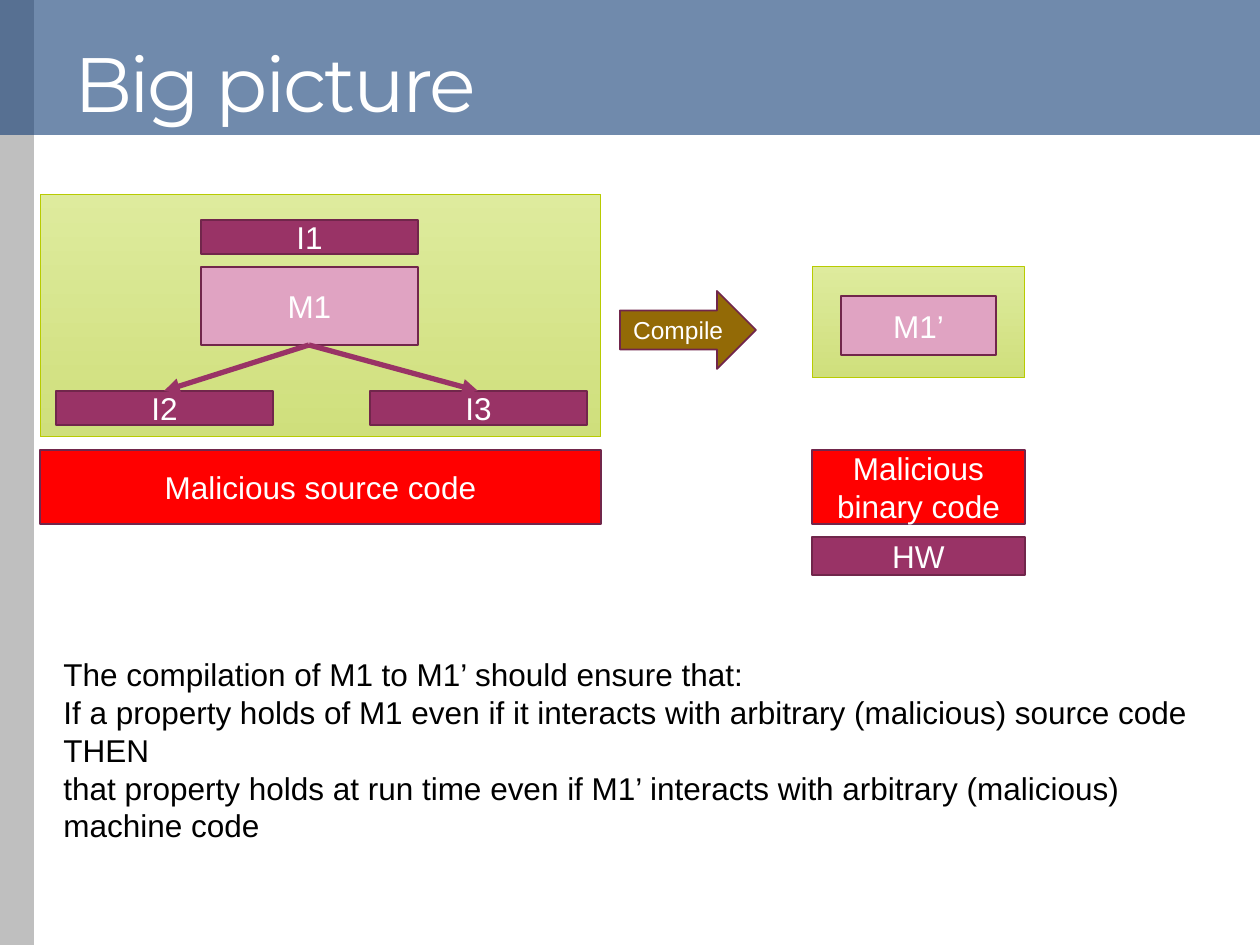
from lxml import etree
from pptx import Presentation
from pptx.dml.color import RGBColor
from pptx.enum.shapes import MSO_CONNECTOR, MSO_SHAPE
from pptx.enum.text import MSO_ANCHOR, MSO_AUTO_SIZE, PP_ALIGN
from pptx.oxml.ns import qn
from pptx.util import Pt

RECTANGLE, RIGHT_ARROW = MSO_SHAPE.RECTANGLE, MSO_SHAPE.RIGHT_ARROW
STRAIGHT = MSO_CONNECTOR.STRAIGHT
MIDDLE, BOTTOM = MSO_ANCHOR.MIDDLE, MSO_ANCHOR.BOTTOM
LEFT, CENTER = PP_ALIGN.LEFT, PP_ALIGN.CENTER

WHITE = RGBColor(0xFF, 0xFF, 0xFF)
BLACK = RGBColor(0x00, 0x00, 0x00)
GREY = RGBColor(0xBF, 0xBF, 0xBF)
NAVY = RGBColor(0x12, 0x3C, 0x75)
PLUM = RGBColor(0x99, 0x33, 0x66)
DARK_PLUM = RGBColor(0x71, 0x26, 0x4B)
PINK = RGBColor(0xE0, 0xA3, 0xC2)
RED = RGBColor(0xFF, 0x00, 0x00)
BROWN = RGBColor(0x93, 0x6A, 0x06)
LIME_LINE = RGBColor(0xB8, 0xCB, 0x01)
LIME_LIGHT = RGBColor(0xDE, 0xEB, 0x9D)
LIME_DARK = RGBColor(0xCF, 0xDF, 0x7C)

PX = 914400 // 126
PAGE_WIDTH, PAGE_HEIGHT = 1260, 945

TITLE = "Big picture"
CLAIM = [
    "The compilation of M1 to M1’ should ensure that:",
    "If a property holds of M1 even if it interacts with arbitrary (malicious) source code",
    "THEN\nthat property holds at run time even if M1’ interacts with arbitrary (malicious) \n"
    "machine code",
]

# Columns (left, width) shared by the stacked parts
SOURCE = (40, 561)
TARGET = (812, 213)
MODULE = (201, 217)
IMPORT_LEFT = (56, 217)
IMPORT_RIGHT = (370, 217)
# Rows (top, height)
MODULE_ROW = (267, 78)
IMPORT_ROW = (391, 34)
ATTACK_ROW = (450, 74)

PANELS = [(SOURCE, (194, 243)), (TARGET, (267, 111))]
BLOCKS = [
    ("M1", MODULE, MODULE_ROW, PINK),
    ("I1", MODULE, (220, 34), PLUM),
    ("I2", IMPORT_LEFT, IMPORT_ROW, PLUM),
    ("I3", IMPORT_RIGHT, IMPORT_ROW, PLUM),
    ("M1’", (841, 155), (296, 59), PINK),
    ("HW", TARGET, (537, 38), PLUM),
    ("Malicious source code", SOURCE, ATTACK_ROW, RED),
    ("Malicious binary code", TARGET, ATTACK_ROW, RED),
]
COMPILE = ((620, 136), (291, 78))

deck = Presentation()
deck.slide_width, deck.slide_height = PAGE_WIDTH * PX, PAGE_HEIGHT * PX
page = deck.slides.add_slide(deck.slide_layouts[6])


def place(column, row):
    """Turn (left, width) and (top, height) in px into EMU for add_shape."""
    return [n * PX for n in (column[0], row[0], column[1], row[1])]


def add_box(column, row, fill=None, line=None, weight=1, kind=RECTANGLE):
    box = page.shapes.add_shape(kind, *place(column, row))
    box.shadow.inherit = False
    if fill is not None:
        box.fill.solid()
        box.fill.fore_color.rgb = fill
    if line is None:
        box.line.fill.background()
    else:
        box.line.color.rgb = line
        box.line.width = Pt(weight)
    return box


def write(box, paragraphs, size=18, font="Arial", color=WHITE, align=CENTER, anchor=MIDDLE):
    frame = box.text_frame
    frame.vertical_anchor = anchor
    for index, text in enumerate(paragraphs):
        para = frame.add_paragraph() if index else frame.paragraphs[0]
        para.text = text.replace("\n", "\v")
        para.alignment = align
        for span in para.runs:
            span.font.size = Pt(size)
            span.font.name = font
            span.font.color.rgb = color


def add_arrow(start, end):
    arrow = page.shapes.add_connector(STRAIGHT, *[n * PX for n in (*start, *end)])
    arrow.line.color.rgb = PLUM
    arrow.line.width = Pt(3)
    etree.SubElement(arrow.line._get_or_add_ln(), qn("a:tailEnd"), type="triangle")
    etree.SubElement(arrow._element.spPr, qn("a:effectLst"))


def middle(column):
    return column[0] + column[1] // 2


add_box((0, 34), (0, PAGE_HEIGHT), GREY)

title = add_box((0, PAGE_WIDTH), (0, 135), NAVY)
tint = title.fill._xPr.find(qn("a:solidFill"))[0]
etree.SubElement(tint, qn("a:alpha"), val="60000")
write(title, [TITLE], size=44, font="Montserrat", align=LEFT, anchor=BOTTOM)
heading = title.text_frame.paragraphs[0]
heading.line_spacing = 0.9
heading._p.get_or_add_pPr().set("marL", str(62 * PX))
heading.runs[0]._r.get_or_add_rPr().set("spc", "-150")

for column, row in PANELS:
    panel = add_box(column, row, line=LIME_LINE, weight=0.5)
    panel.fill.gradient()
    panel.fill.gradient_angle = 270
    for stop, color in zip(panel.fill.gradient_stops, (LIME_LIGHT, LIME_DARK)):
        stop.color.rgb = color

for label, column, row, fill in BLOCKS:
    write(add_box(column, row, fill, DARK_PLUM), [label])

for column in (IMPORT_LEFT, IMPORT_RIGHT):
    add_arrow((middle(MODULE), sum(MODULE_ROW)), (middle(column), IMPORT_ROW[0]))

write(add_box(*COMPILE, BROWN, DARK_PLUM, kind=RIGHT_ARROW), ["Compile"], size=14)

claim = page.shapes.add_textbox(*place((51, 1160), (649, 204)))
claim.text_frame.word_wrap = False
claim.text_frame.auto_size = MSO_AUTO_SIZE.SHAPE_TO_FIT_TEXT
write(claim, CLAIM, color=BLACK, align=LEFT, anchor=MSO_ANCHOR.TOP)

deck.save("out.pptx")
